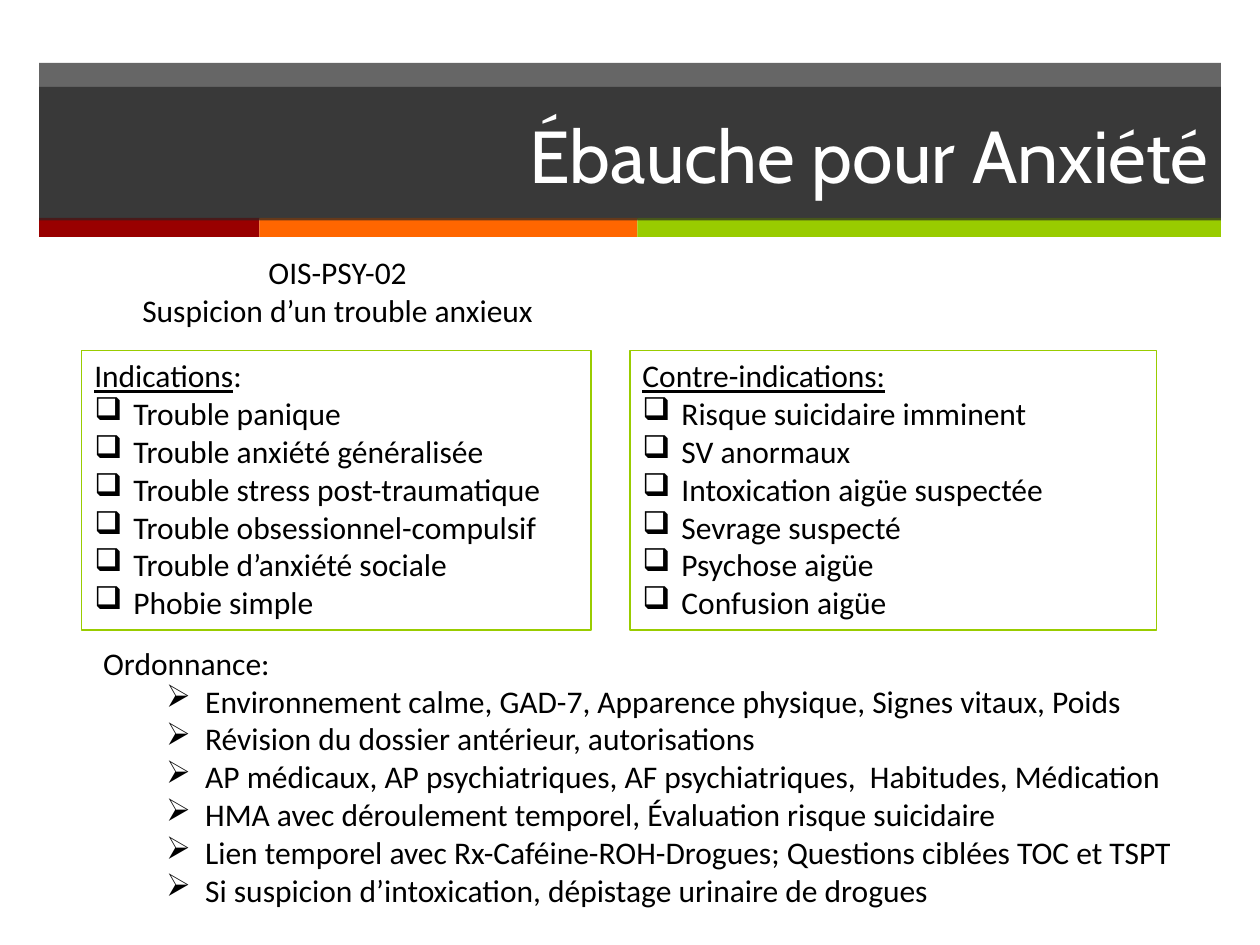
from lxml.etree import SubElement
from pptx import Presentation
from pptx.dml.color import RGBColor
from pptx.enum.shapes import MSO_SHAPE
from pptx.enum.text import MSO_ANCHOR, PP_ALIGN
from pptx.oxml.ns import qn
from pptx.util import Inches, Pt

CHARCOAL = RGBColor(0x26, 0x26, 0x26)
RED = RGBColor(0x99, 0x00, 0x00)
ORANGE = RGBColor(0xFF, 0x66, 0x00)
GREEN = RGBColor(0x99, 0xCC, 0x00)
WHITE = RGBColor(0xFF, 0xFF, 0xFF)
BLACK = RGBColor(0x00, 0x00, 0x00)


class SlideBuilder:
    title_font, title_size = "Cabin", Pt(42)
    body_font, body_size = "Calibri", Pt(18)
    hanging = 0.31

    def __init__(self, slide):
        self.slide = slide

    def band(self, left, top, width, height, color, opacity=100):
        """Filled rectangle without outline."""
        band = self.slide.shapes.add_shape(
            MSO_SHAPE.RECTANGLE, Inches(left), Inches(top), Inches(width), Inches(height))
        band.shadow.inherit = False
        band.line.fill.background()
        band.fill.solid()
        band.fill.fore_color.rgb = color
        if opacity < 100:
            tint = band.fill._xPr.find(qn("a:solidFill"))[0]
            SubElement(tint, qn("a:alpha"), val=str(opacity * 1000))
        return band

    def style(self, paragraph, font, size, color):
        for run in paragraph.runs:
            run.font.name, run.font.size = font, size
            run.font.color.rgb = color

    def title(self, left, top, width, height, text):
        """Right-aligned heading on a translucent band."""
        band = self.band(left, top, width, height, CHARCOAL, 70)
        frame = band.text_frame
        frame.text = text
        frame.vertical_anchor = MSO_ANCHOR.MIDDLE
        heading = frame.paragraphs[0]
        heading.alignment = PP_ALIGN.RIGHT
        self.style(heading, self.title_font, self.title_size, WHITE)

    def text(self, left, top, width, height, lines, align=PP_ALIGN.LEFT, wrap=True):
        """Text box with one paragraph per line."""
        box = self.slide.shapes.add_textbox(
            Inches(left), Inches(top), Inches(width), Inches(height))
        frame = box.text_frame
        frame.word_wrap = wrap
        frame.text = "\n".join(lines)
        for paragraph in frame.paragraphs:
            paragraph.alignment = align
            self.style(paragraph, self.body_font, self.body_size, BLACK)
        return box

    def bullet(self, paragraph, mark, margin):
        properties = paragraph._p.get_or_add_pPr()
        properties.set("marL", str(Inches(margin)))
        properties.set("indent", str(-Inches(self.hanging)))
        SubElement(properties, qn("a:buChar"), char=mark)

    def bullet_list(self, left, top, width, height, heading, items, mark,
                    level=0, wrap=True):
        """Heading followed by bulleted items."""
        box = self.text(left, top, width, height, [heading, *items], wrap=wrap)
        for item in box.text_frame.paragraphs[1:]:
            item.level = level
            self.bullet(item, mark, self.hanging + 0.5 * level)
        return box

    def checklist(self, left, width, heading, items, plain_end=""):
        """Outlined checklist with an underlined heading."""
        box = self.bullet_list(left, 2.78, width, 2.22, heading, items, "❑")
        box.line.color.rgb = GREEN
        box.line.width = Pt(0.75)
        first = box.text_frame.paragraphs[0]
        first.runs[0].font.underline = True
        if plain_end:
            first.add_run().text = plain_end
            self.style(first, self.body_font, self.body_size, BLACK)


def main():
    deck = Presentation()
    deck.slide_width, deck.slide_height = Inches(10), Inches(7.5)
    page = SlideBuilder(deck.slides.add_slide(deck.slide_layouts[6]))

    # Header bands and title
    page.band(0.31, 0.5, 9.38, 1.24, CHARCOAL, 70)
    left = 0.31
    for width, color in ((1.75, RED), (3, ORANGE), (4.63, GREEN)):
        page.band(left, 1.73, width, 0.15, color)
        left += width
    page.title(0.31, 0.69, 9.38, 1.06, "Ébauche pour Anxiété")

    # Protocol name
    page.text(0.8, 1.96, 3.76, 0.71,
              ["OIS-PSY-02", "Suspicion d’un trouble anxieux"], PP_ALIGN.CENTER)

    # Indications and contraindications
    page.checklist(0.65, 4.04, "Indications", [
        "Trouble panique",
        "Trouble anxiété généralisée",
        "Trouble stress post-traumatique",
        "Trouble obsessionnel-compulsif",
        "Trouble d’anxiété sociale",
        "Phobie simple",
    ], plain_end=":")
    page.checklist(5, 4.18, "Contre-indications:", [
        "Risque suicidaire imminent",
        "SV anormaux",
        "Intoxication aigüe suspectée",
        "Sevrage suspecté",
        "Psychose aigüe",
        "Confusion aigüe",
    ])

    # Orders
    page.bullet_list(0.72, 5.06, 8.81, 2.22, "Ordonnance:", [
        "Environnement calme, GAD-7, Apparence physique, Signes vitaux, Poids",
        "Révision du dossier antérieur, autorisations",
        "AP médicaux, AP psychiatriques, AF psychiatriques,  Habitudes, Médication",
        "HMA avec déroulement temporel, Évaluation risque suicidaire",
        "Lien temporel avec Rx-Caféine-ROH-Drogues; Questions ciblées TOC et TSPT",
        "Si suspicion d’intoxication, dépistage urinaire de drogues",
    ], "➢", level=1, wrap=False)

    deck.save("out.pptx")


if __name__ == "__main__":
    main()
